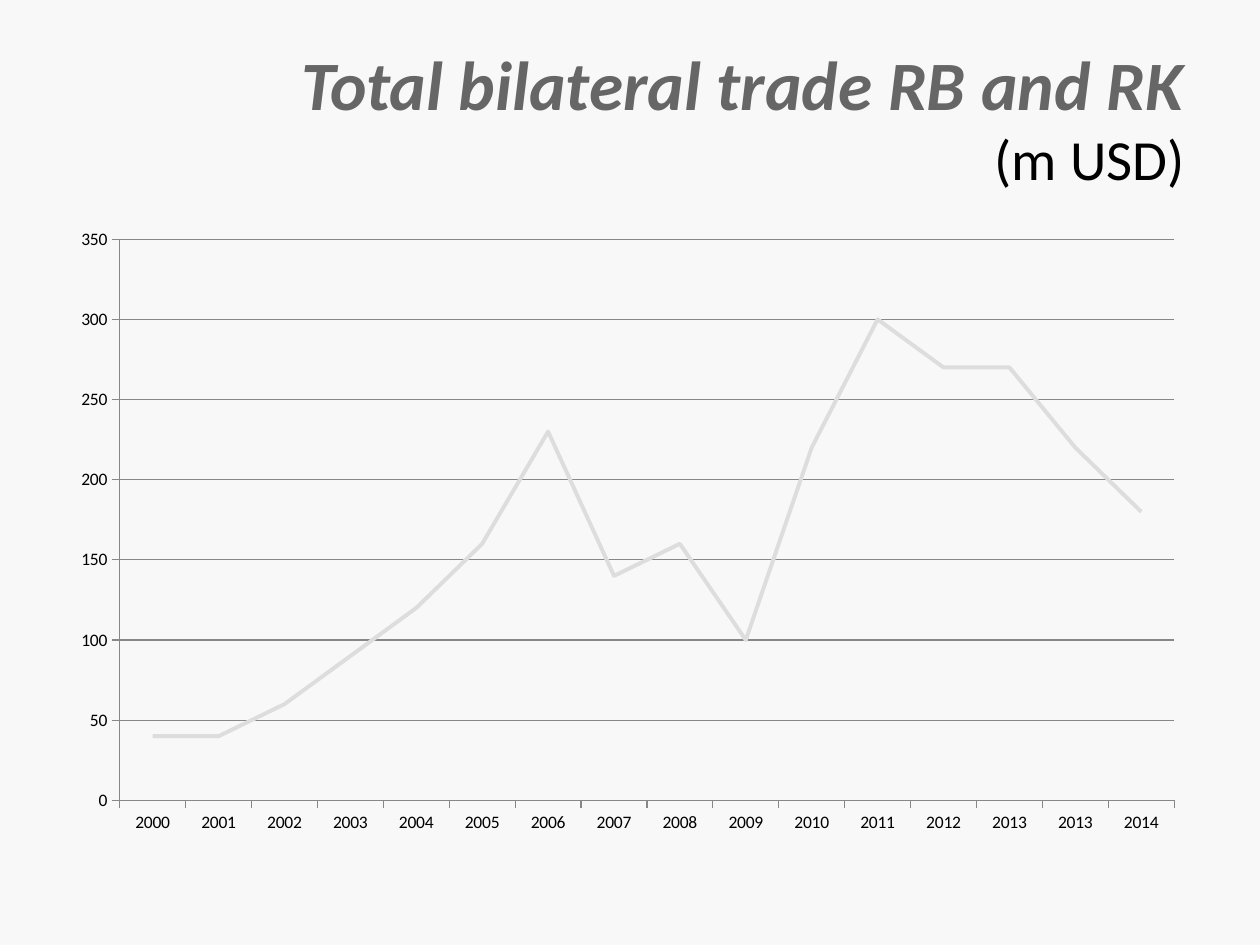
from lxml import etree
from pptx import Presentation
from pptx.chart.data import CategoryChartData
from pptx.dml.color import RGBColor
from pptx.enum.chart import XL_CHART_TYPE, XL_MARKER_STYLE, XL_TICK_MARK
from pptx.enum.text import MSO_ANCHOR, PP_ALIGN
from pptx.oxml import parse_xml
from pptx.oxml.ns import nsdecls
from pptx.util import Inches, Pt

LINE = XL_CHART_TYPE.LINE
NO_MARK = XL_MARKER_STYLE.NONE
OUTSIDE = XL_TICK_MARK.OUTSIDE
MIDDLE = MSO_ANCHOR.MIDDLE
RIGHT = PP_ALIGN.RIGHT

BACK = RGBColor(0xF8, 0xF8, 0xF8)
GREY = RGBColor(0x66, 0x66, 0x66)
BLACK = RGBColor(0, 0, 0)
PALE = RGBColor(0xDD, 0xDD, 0xDD)
RULE = RGBColor(0x87, 0x87, 0x87)
FONT = "Calibri"

# text, size, colour, bold and italic
TITLE = [
    ("Total bilateral trade RB and RK", 39.6, GREY, True),
    ("(m USD)", 32.4, BLACK, False),
]
TRADE = [
    ("2000", 40), ("2001", 40), ("2002", 60), ("2003", 90),
    ("2004", 120), ("2005", 160), ("2006", 230), ("2007", 140),
    ("2008", 160), ("2009", 100), ("2010", 220), ("2011", 300),
    ("2012", 270), ("2013", 270), ("2013", 220), ("2014", 180),
]
# shares of the chart's size
PLOT = {"x": 0.05, "y": 0.03, "w": 0.93, "h": 0.9}

WIDE, HIGH = Inches(10), Inches(7.5)
LEFT, SPAN = int(WIDE * 0.05), int(WIDE * 0.9)


def add_title(slide):
    box = slide.shapes.add_textbox(LEFT, int(HIGH * 0.04), SPAN, Inches(1.25))
    frame = box.text_frame
    frame.word_wrap = True
    frame.vertical_anchor = MIDDLE
    para = frame.paragraphs[0]
    para.text = "\v".join(row[0] for row in TITLE)
    para.alignment = RIGHT
    for run, (_, size, color, strong) in zip(para.runs, TITLE):
        font = run.font
        font.name, font.size = FONT, Pt(size)
        font.bold = font.italic = strong
        font.color.rgb = color


def place_plot(chart):
    """Fix the inner plot area within the chart."""
    area = chart.plots[0]._element.getparent()
    for old in area.findall("{*}layout"):
        area.remove(old)
    layout = parse_xml(f"<c:layout {nsdecls('c')}><c:manualLayout/></c:layout>")
    space = layout.nsmap["c"]
    parts = {"layoutTarget": "inner", "xMode": "edge", "yMode": "edge", **PLOT}
    for name, value in parts.items():
        etree.SubElement(layout[0], f"{{{space}}}{name}").set("val", str(value))
    area.insert(0, layout)


def add_graph(slide):
    data = CategoryChartData()
    data.categories = [year for year, _ in TRADE]
    data.add_series("Series 1", [value for _, value in TRADE])
    chart = slide.shapes.add_chart(
        LINE, LEFT, Inches(1.75), SPAN, Inches(4.95), data).chart
    chart.has_legend = chart.has_title = False
    chart.font.name, chart.font.size = FONT, Pt(10)
    chart.font.color.rgb = BLACK

    years, scale = chart.category_axis, chart.value_axis
    scale.minimum_scale, scale.maximum_scale, scale.major_unit = 0, 350, 50
    scale.has_major_gridlines = True
    for axis in (years, scale):
        axis.major_tick_mark = OUTSIDE
    for item in (years, scale, scale.major_gridlines):
        item.format.line.color.rgb = RULE
        item.format.line.width = Pt(0.75)

    chart.plots[0].vary_by_categories = False
    trend = chart.plots[0].series[0]
    trend.smooth = False
    trend.marker.style = NO_MARK
    trend.format.line.color.rgb = PALE
    trend.format.line.width = Pt(2.25)
    place_plot(chart)


def main():
    deck = Presentation()
    deck.slide_width, deck.slide_height = WIDE, HIGH
    slide = deck.slides.add_slide(deck.slide_layouts[6])
    slide.background.fill.solid()
    slide.background.fill.fore_color.rgb = BACK
    add_title(slide)
    add_graph(slide)
    deck.save("out.pptx")


if __name__ == "__main__":
    main()
